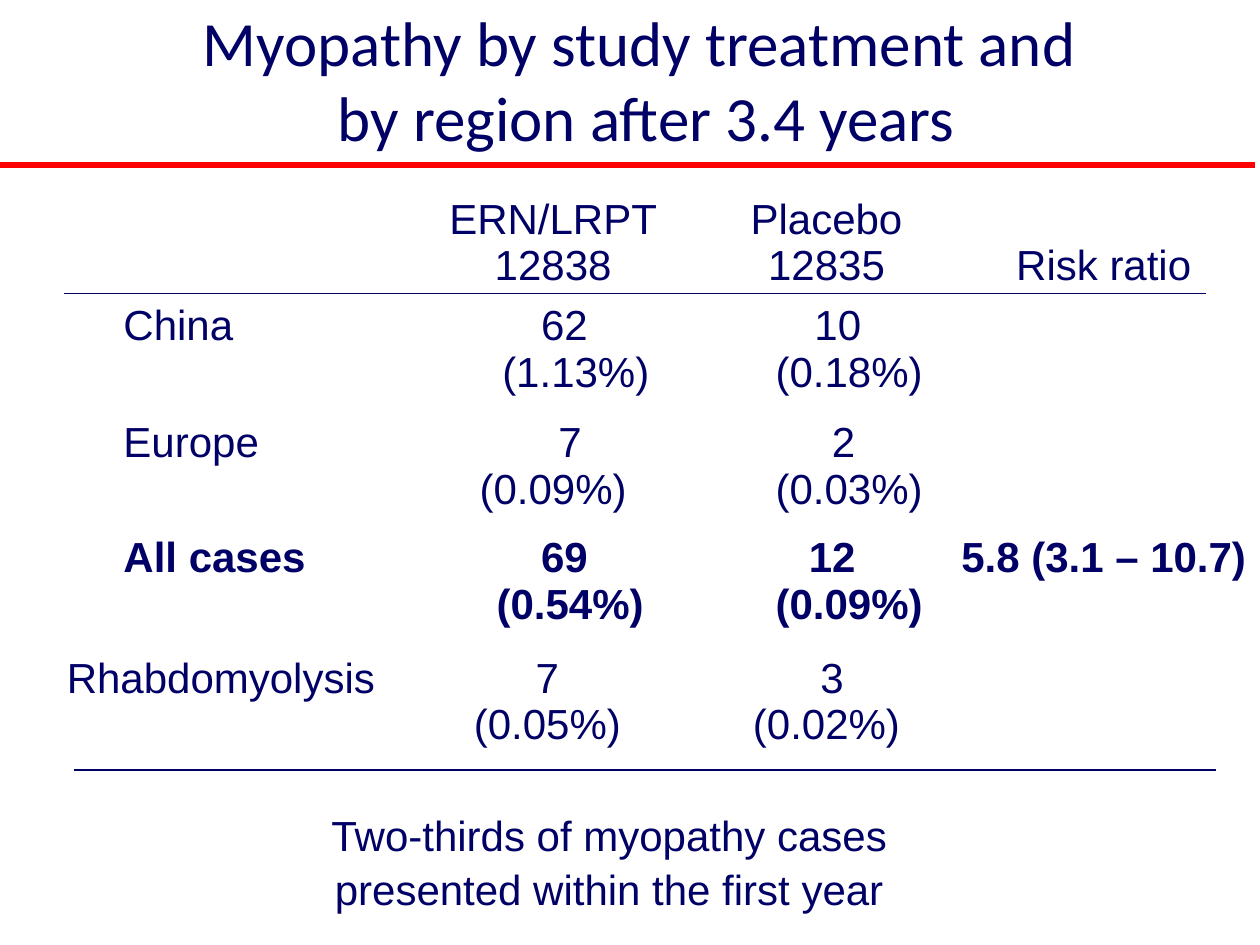
from pptx import Presentation
from pptx.dml.color import RGBColor
from pptx.enum.shapes import MSO_CONNECTOR
from pptx.enum.text import MSO_ANCHOR, PP_ALIGN
from pptx.oxml.ns import qn
from pptx.util import Inches, Pt

LEFT, CENTER = PP_ALIGN.LEFT, PP_ALIGN.CENTER
TOP, MIDDLE, BOTTOM = MSO_ANCHOR.TOP, MSO_ANCHOR.MIDDLE, MSO_ANCHOR.BOTTOM
STRAIGHT = MSO_CONNECTOR.STRAIGHT

COLORS = {"navy": "000066", "red": "FF0000"}
TITLE_FONT = {"name": "Calibri", "size": Pt(36), "bold": False}
BODY_FONT = {"name": "Arial", "size": Pt(24), "bold": False}
BOLD_FONT = {**BODY_FONT, "bold": True}

NUDGE = 0.09  # inches, the step by which centred lines are moved sideways

COLUMN_WIDTHS = [27.5, 24.2, 19.2, 24.8]
ROW_HEIGHTS = [9.6, 9.3, 9.1, 9.6, 5.5]

# Each line of a cell is its text and its sideways shift in nudges.
HEADER = [
    [],
    [("ERN/LRPT", 0), ("12838", 0)],
    [("Placebo", 0), ("12835", 0)],
    [("Risk ratio", 0)],
]
BODY = [
    [[("China", 5)], [("62", 1), ("(1.13%)", 2)], [("10", 1), ("(0.18%)", 2)], []],
    [[("Europe", 5)], [("7", 1.5), ("(0.09%)", 0)], [("2", 1.5), ("(0.03%)", 2)], []],
    [[("All cases", 5)], [("69", 1), ("(0.54%)", 1.5)], [("12", 0.5), ("(0.09%)", 2)],
     [("5.8 (3.1 – 10.7)", 0)]],
    [[("Rhabdomyolysis", 0)], [("7", -0.5), ("(0.05%)", 0)], [("3", 0.5), ("(0.02%)", 0)], []],
]
BOLD_ROW = 3


class SlideBuilder:
    """Places elements on a grid of 100 columns by 75 rows."""

    def __init__(self, presentation):
        self.slide = presentation.slides.add_slide(presentation.slide_layouts[6])
        self.column = presentation.slide_width / 100
        self.row = presentation.slide_height / 75

    def across(self, columns):
        return round(columns * self.column)

    def down(self, rows):
        return round(rows * self.row)

    def area(self, left, top, width, height):
        return self.across(left), self.down(top), self.across(width), self.down(height)

    def fill_lines(self, frame, lines, font, align=CENTER, spacing=1.0):
        """Add one paragraph per line, shifted by a margin on one side."""
        for index, (text, shift) in enumerate(lines):
            paragraph = frame.paragraphs[0] if index == 0 else frame.add_paragraph()
            paragraph.alignment = align
            paragraph.line_spacing = spacing
            if shift:
                # A centred line moves by half of its margin.
                share = 2 if align == CENTER else 1
                margin = Inches(abs(shift) * share * NUDGE)
                paragraph._p.get_or_add_pPr().set("marL" if shift > 0 else "marR", str(margin))
            run = paragraph.add_run()
            run.text = text
            for name, value in font.items():
                setattr(run.font, name, value)
            run.font.color.rgb = RGBColor.from_string(COLORS["navy"])

    def text(self, area, lines, font, anchor=TOP, spacing=1.0):
        frame = self.slide.shapes.add_textbox(*self.area(*area)).text_frame
        frame.word_wrap = True
        frame.vertical_anchor = anchor
        self.fill_lines(frame, lines, font, spacing=spacing)

    def rule(self, left, top, width, color, weight):
        start, level = self.across(left), self.down(top)
        line = self.slide.shapes.add_connector(
            STRAIGHT, start, level, start + self.across(width), level)
        line.line.color.rgb = RGBColor.from_string(COLORS[color])
        line.line.width = Pt(weight)
        properties = line._element.spPr
        properties.append(properties.makeelement(qn("a:effectLst"), {}))

    def table(self, left, top, rows):
        table = self.slide.shapes.add_table(
            len(rows), len(COLUMN_WIDTHS),
            *self.area(left, top, sum(COLUMN_WIDTHS), sum(ROW_HEIGHTS))).table
        table.first_row = table.horz_banding = False
        for column, width in zip(table.columns, COLUMN_WIDTHS):
            column.width = self.across(width)
        for row, height in zip(table.rows, ROW_HEIGHTS):
            row.height = self.down(height)
        for row_index, row in enumerate(rows):
            font = BOLD_FONT if row_index == BOLD_ROW else BODY_FONT
            for column_index, lines in enumerate(row):
                cell = table.cell(row_index, column_index)
                cell.fill.background()
                cell.vertical_anchor = BOTTOM if row_index == 0 else TOP
                self.fill_lines(cell.text_frame, lines, font, CENTER if column_index else LEFT)


def main():
    presentation = Presentation()
    presentation.slide_width, presentation.slide_height = Inches(10), Inches(7.5)
    builder = SlideBuilder(presentation)
    builder.text((5.1, 0, 91.3, 12.5),
                 [("Myopathy by study treatment and", 0), ("by region after 3.4 years", 0.6)],
                 TITLE_FONT, MIDDLE)
    builder.table(4.3, 13.9, [HEADER, *BODY])
    builder.rule(-0.4, 13.1, 100, "red", 3)
    builder.text((24.8, 63.5, 48, 9.1),
                 [("Two-thirds of myopathy cases", -0.5),
                  ("presented within the first year", -0.5)],
                 BODY_FONT, spacing=1.07)
    for left, top in ((5.1, 23.3), (5.9, 61.1)):
        builder.rule(left, top, 90.6, "navy", 1)
    presentation.save("out.pptx")


if __name__ == "__main__":
    main()
